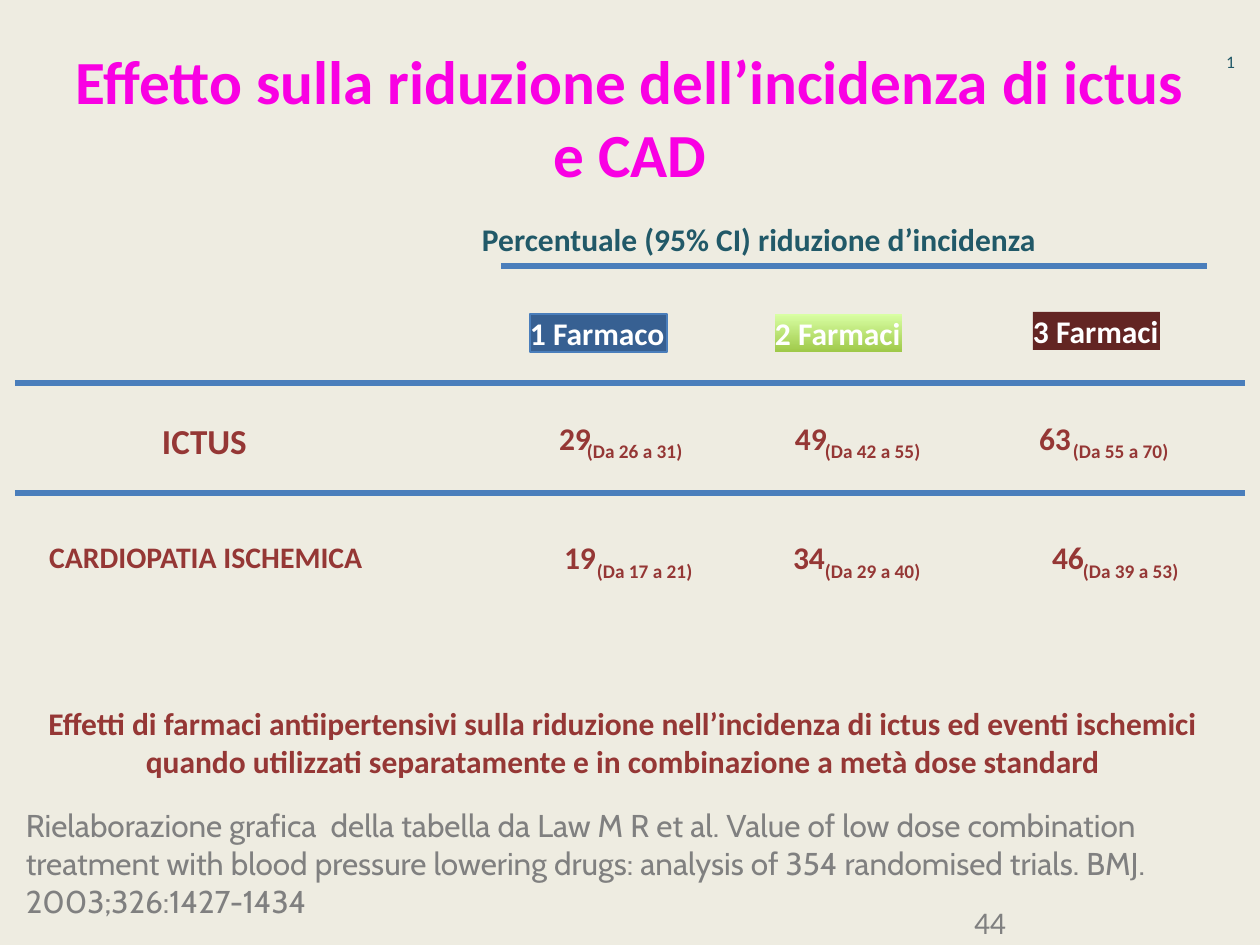
import pptx
import pptx.dml.color
import pptx.enum.shapes
import pptx.enum.text
import pptx.oxml
import pptx.util

RGB = pptx.dml.color.RGBColor
ALIGN = pptx.enum.text.PP_ALIGN
ANCHOR = pptx.enum.text.MSO_ANCHOR
PX = 914400 / 126

BACKGROUND = RGB(0xEE, 0xEC, 0xE1)
MAGENTA = RGB(0xF9, 0x00, 0xE3)
TEAL = RGB(0x21, 0x59, 0x68)
RED = RGB(0x95, 0x37, 0x35)
GRAY = RGB(0x80, 0x80, 0x80)
WHITE = RGB(0xFF, 0xFF, 0xFF)
LINE_BLUE = RGB(0x4A, 0x7E, 0xBB)
BLUE = RGB(0x37, 0x60, 0x92)
GREENS = (RGB(0xD9, 0xFF, 0xA4), RGB(0x9F, 0xC9, 0x49))
MAROON = RGB(0x63, 0x25, 0x23)

# Content
TITLE = "Effetto sulla riduzione dell’incidenza di ictus e CAD"
# text, box (left, top, width, height), format
TEXTS = [
    ("Percentuale (95% CI) riduzione d’incidenza", (476, 214, 580, 50),
     dict(color=TEAL, wrap=False)),
    ("Effetti di farmaci antiipertensivi sulla riduzione nell’incidenza di "
     "ictus ed eventi ischemici quando utilizzati separatamente e in "
     "combinazione a metà dose standard", (10, 698, 1226, 89),
     dict(align=ALIGN.CENTER)),
    ("44", (968, 897, 294, 50), dict(color=GRAY, bold=False)),
    ("Rielaborazione grafica  della tabella da Law M R et al. Value of low "
     "dose combination treatment with blood pressure lowering drugs: analysis "
     "of 354 randomised trials. BMJ. 2003;326:1427-1434", (20, 800, 1235, 127),
     dict(color=GRAY, bold=False, font="Cabin")),
    ("1", (1220, 45, 19, 34),
     dict(color=TEAL, bold=False, size=10, wrap=False)),
]
# text, box, fill colours
HEADERS = [
    ("1 Farmaco", (530, 314, 137, 38), (BLUE,)),
    ("2 Farmaci", (775, 314, 127, 38), GREENS),
    ("3 Farmaci", (1033, 312, 127, 38), MAROON and (MAROON,)),
]
# label, label box, label size, number top, range top, cells
# each cell: number, number left, range, range left
ROWS = [
    ("ICTUS", (156, 413, 102, 55), 20, 413, 422,
     [("29", 553, "(Da 26 a 31)", 574), ("49", 789, "(Da 42 a 55)", 812),
      ("63", 1033, "(Da 55 a 70)", 1060)]),
    ("CARDIOPATIA ISCHEMICA", (43, 533, 347, 49), 17, 532, 542,
     [("19", 558, "(Da 17 a 21)", 584), ("34", 787, "(Da 29 a 40)", 812),
      ("46", 1046, "(Da 39 a 53)", 1070)]),
]
# left, right, y
RULES = [(501, 1207, 266), (15, 1245, 383), (15, 1245, 493)]
NUMBER_SIZE = (45, 50)
RANGE_SIZE = (116, 50)


def emu(*lengths):
    return [pptx.util.Emu(round(length * PX)) for length in lengths]


def write(shape, text, size=18, color=RED, bold=True, font="Calibri",
          align=ALIGN.LEFT, wrap=True, anchor=ANCHOR.TOP, insets=(6, 6, 6, 6)):
    frame = shape.text_frame
    frame.text = text
    frame.word_wrap = wrap
    frame.vertical_anchor = anchor
    (frame.margin_left, frame.margin_top,
     frame.margin_right, frame.margin_bottom) = emu(*insets)
    paragraph = frame.paragraphs[0]
    paragraph.alignment = align
    run_font = paragraph.runs[0].font
    run_font.name, run_font.size = font, pptx.util.Pt(size)
    run_font.bold, run_font.color.rgb = bold, color


def add_text(slide, text, box, **style):
    write(slide.shapes.add_textbox(*emu(*box)), text, **style)


def add_header(slide, text, box, colors):
    shape = slide.shapes.add_shape(
        pptx.enum.shapes.MSO_SHAPE.RECTANGLE, *emu(*box))
    shape.shadow.inherit = False
    if len(colors) == 2:
        shape.fill.gradient()
        shape.fill.gradient_angle = 270
        for stop, color in zip(shape.fill.gradient_stops, colors):
            stop.color.rgb = color
    else:
        shape.fill.solid()
        shape.fill.fore_color.rgb = colors[0]
    if colors[0] == BLUE:
        shape.line.color.rgb = LINE_BLUE
        shape.line.width = pptx.util.Pt(0.75)
    else:
        shape.line.fill.background()
    write(shape, text, color=WHITE, wrap=False, insets=(0, 0, 0, 0))


def add_rule(slide, left, right, y):
    rule = slide.shapes.add_connector(
        pptx.enum.shapes.MSO_CONNECTOR.STRAIGHT, *emu(left, y, right, y))
    rule.line.color.rgb = LINE_BLUE
    rule.line.width = pptx.util.Pt(3)
    rule._element.spPr.append(pptx.oxml.parse_xml(
        '<a:effectLst xmlns:a='
        '"http://schemas.openxmlformats.org/drawingml/2006/main"/>'))


def main():
    presentation = pptx.Presentation()
    presentation.slide_width, presentation.slide_height = emu(1260, 945)
    slide = presentation.slides.add_slide(presentation.slide_layouts[5])
    slide.background.fill.solid()
    slide.background.fill.fore_color.rgb = BACKGROUND

    # Title
    title = slide.shapes.title
    title.left, title.top, title.width, title.height = emu(63, 38, 1134, 157)
    write(title, TITLE, size=35, color=MAGENTA, align=ALIGN.CENTER,
          anchor=ANCHOR.MIDDLE, insets=(0, 0, 0, 0))

    # Rules and column headers
    for rule in RULES:
        add_rule(slide, *rule)
    for header in HEADERS:
        add_header(slide, *header)

    # Result rows: number with its confidence interval
    for label, box, size, number_top, range_top, cells in ROWS:
        add_text(slide, label, box, size=size, wrap=False)
        for number, number_left, interval, range_left in cells:
            add_text(slide, number, (number_left, number_top, *NUMBER_SIZE),
                     wrap=False)
            add_text(slide, interval, (range_left, range_top, *RANGE_SIZE),
                     size=11, wrap=False, insets=(13, 18, 6, 6))

    # Heading, conclusion, source and page numbers
    for text, box, style in TEXTS:
        add_text(slide, text, box, **style)

    presentation.save("out.pptx")


if __name__ == "__main__":
    main()
